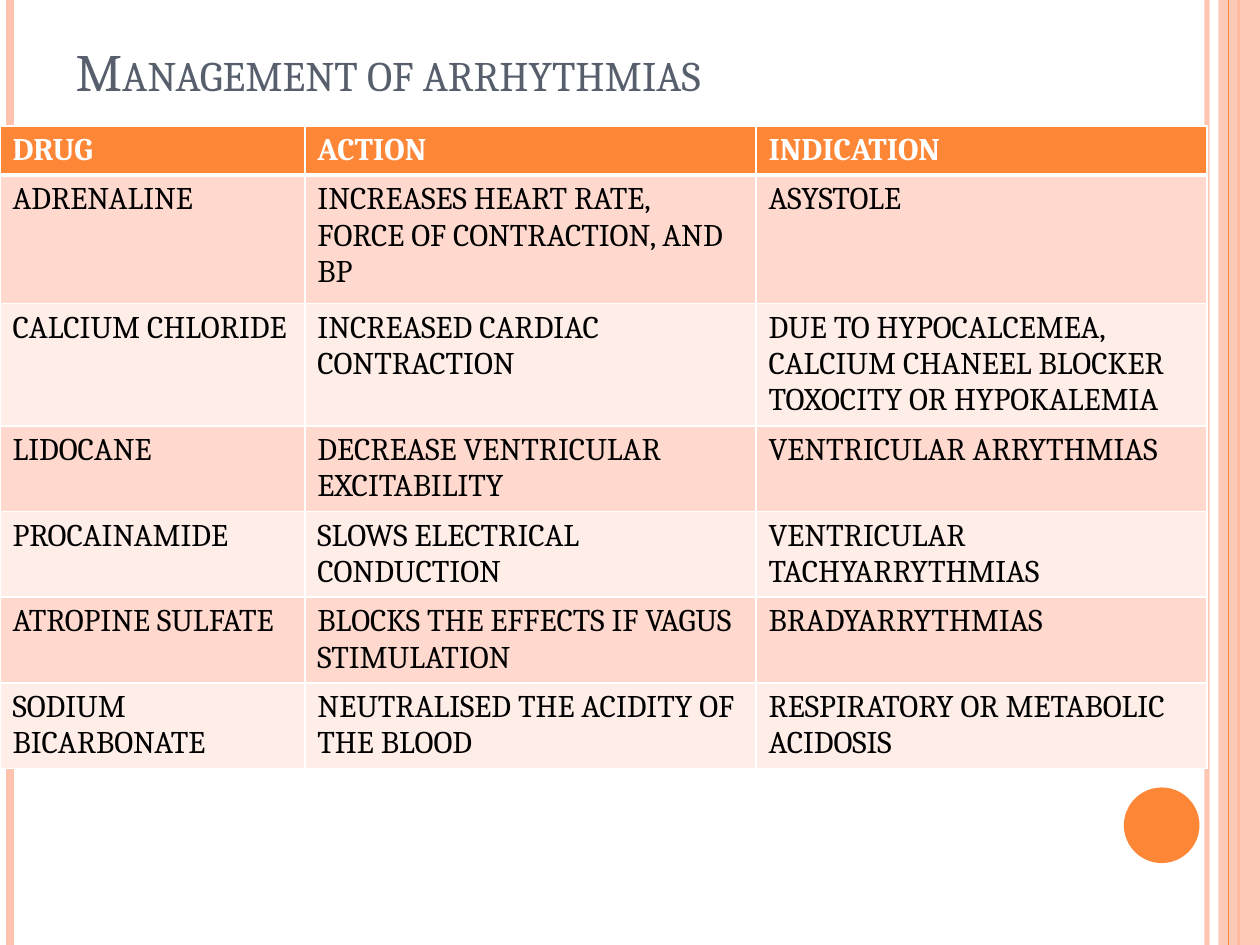
"""Build the slide on drugs for the management of arrhythmias."""
from pptx import Presentation
from pptx.dml.color import RGBColor
from pptx.enum import shapes, text
from pptx.oxml import parse_xml
from pptx.oxml.ns import nsdecls, qn
from pptx.util import Inches, Pt

TITLE = "Management of arrhythmias"
ROWS = [
    ("DRUG", "ACTION", "INDICATION"),
    ("ADRENALINE", "INCREASES HEART RATE, FORCE OF CONTRACTION, AND BP", "ASYSTOLE"),
    ("CALCIUM CHLORIDE", "INCREASED CARDIAC CONTRACTION",
     "DUE TO HYPOCALCEMEA, CALCIUM CHANEEL BLOCKER TOXOCITY OR HYPOKALEMIA"),
    ("LIDOCANE", "DECREASE VENTRICULAR EXCITABILITY", "VENTRICULAR ARRYTHMIAS"),
    ("PROCAINAMIDE", "SLOWS ELECTRICAL CONDUCTION", "VENTRICULAR TACHYARRYTHMIAS"),
    ("ATROPINE SULFATE", "BLOCKS THE EFFECTS IF VAGUS STIMULATION", "BRADYARRYTHMIAS"),
    ("SODIUM BICARBONATE", "NEUTRALISED THE ACIDITY OF THE BLOOD",
     "RESPIRATORY OR METABOLIC ACIDOSIS"),
]
COL_WIDTHS = [2.42, 3.58, 3.58]
ROW_HEIGHTS = [0.39, 1.02, 0.97] + [0.68] * 4
ORANGE, PEACH, WHITE = "FE8637", "FEC3AE", "FFFFFF"
BANDS = ["FFEDE8", "FFD9CE"]
BACK_LINES = [(9.58, PEACH, 3, 93), (0.08, PEACH, 4.5, 100), (9.83, ORANGE, 1.5, 100)]
FRONT_LINES = [(9.75, ORANGE, 0.75, 100)]
SIDE_BAND = (shapes.MSO_SHAPE.RECTANGLE, (9.67, 0, 0.33, 7.5), PEACH, 87)
DISC = (shapes.MSO_SHAPE.OVAL, (8.92, 6.25, 0.6, 0.6), ORANGE, 100)


def rgb(value):
    return RGBColor.from_string(value)


def set_alpha(element, percent):
    if percent < 100:
        color = next(element.iter(qn("a:srgbClr")))
        color.append(parse_xml(f'<a:alpha {nsdecls("a")} val="{percent * 1000}"/>'))


def set_font(font, color, **values):
    for name, value in {"name": "Cambria", **values}.items():
        setattr(font, name, value)
    font.color.rgb = rgb(color)


def add_rule(s, x, color, width, alpha):
    line = s.shapes.add_connector(shapes.MSO_CONNECTOR.STRAIGHT,
                                  Inches(x), 0, Inches(x), Inches(7.5))
    line.line.color.rgb = rgb(color)
    line.line.width = Pt(width)
    sp_pr = line._element.spPr
    set_alpha(sp_pr, alpha)
    sp_pr.append(parse_xml(f'<a:effectLst {nsdecls("a")}/>'))


def add_panel(s, kind, box, color, alpha):
    sp = s.shapes.add_shape(kind, *map(Inches, box))
    sp.shadow.inherit = False
    sp.fill.solid()
    sp.fill.fore_color.rgb = rgb(color)
    sp.line.fill.background()
    set_alpha(sp._element.spPr, alpha)


def set_borders(cell, widths):
    for side, width in widths.items():
        cell._tc.get_or_add_tcPr().append(parse_xml(
            f'<a:ln{side} {nsdecls("a")} w="{Pt(width)}"><a:solidFill>'
            f'<a:srgbClr val="{WHITE}"/></a:solidFill></a:ln{side}>'))


def add_title(s):
    sp = s.shapes.title
    sp.left, sp.top, sp.width, sp.height = map(Inches, (0.5, 0.04, 8.17, 0.82))
    tf = sp.text_frame
    tf.text = TITLE
    tf.vertical_anchor = text.MSO_ANCHOR.BOTTOM
    p = tf.paragraphs[0]
    p.alignment = text.PP_ALIGN.LEFT
    r = p.runs[0]
    set_font(r.font, "575F6D", size=Pt(30))
    r.font._element.set("cap", "small")


def add_drug_table(s):
    frame = s.shapes.add_table(len(ROWS), len(COL_WIDTHS), 0, Inches(1),
                               Inches(sum(COL_WIDTHS)), Inches(sum(ROW_HEIGHTS)))
    table = frame.table
    for column, width in zip(table.columns, COL_WIDTHS):
        column.width = Inches(width)
    for i, (row, height, labels) in enumerate(zip(table.rows, ROW_HEIGHTS, ROWS)):
        row.height = Inches(height)
        header = i == 0
        for cell, label in zip(row.cells, labels):
            set_borders(cell, {"L": 1, "R": 1, "T": 3 if i == 1 else 1,
                               "B": 3 if header else 1})
            cell.fill.solid()
            cell.fill.fore_color.rgb = rgb(ORANGE if header else BANDS[i % 2])
            cell.text = label
            set_font(cell.text_frame.paragraphs[0].runs[0].font,
                     WHITE if header else "000000", size=Pt(18), bold=header)


def main():
    prs = Presentation()
    prs.slide_width, prs.slide_height = Inches(10), Inches(7.5)
    s = prs.slides.add_slide(prs.slide_layouts[5])
    for rule in BACK_LINES:
        add_rule(s, *rule)
    add_panel(s, *SIDE_BAND)
    for rule in FRONT_LINES:
        add_rule(s, *rule)
    add_panel(s, *DISC)
    add_title(s)
    add_drug_table(s)
    prs.save("out.pptx")


if __name__ == "__main__":
    main()
